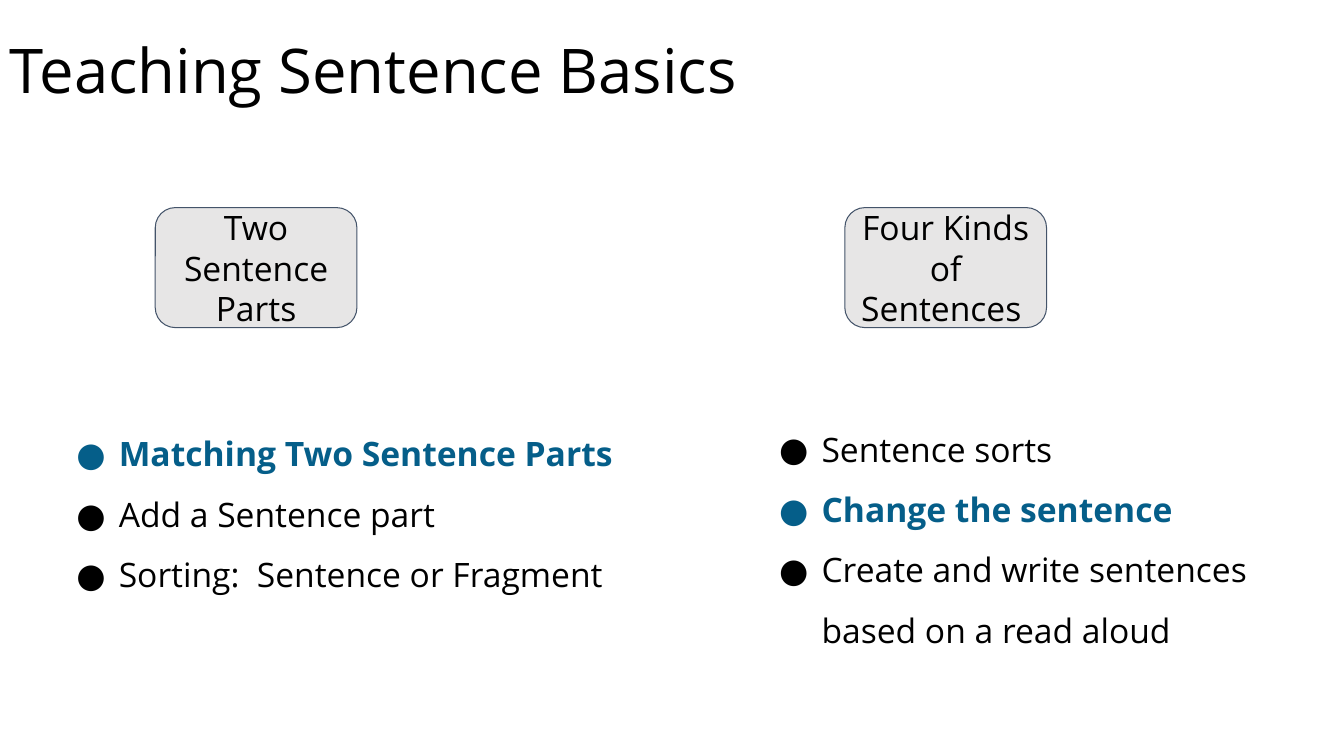
from lxml.etree import SubElement
from pptx import Presentation
from pptx.dml.color import RGBColor
from pptx.enum.shapes import MSO_SHAPE
from pptx.enum.text import MSO_ANCHOR, PP_ALIGN
from pptx.oxml.ns import qn
from pptx.util import Inches, Pt

FONT = "Open Sans"
BLACK, BLUE, GREY, SLATE = "000000", "055E89", "E7E6E6", "44546A"


def color(code):
    return RGBColor.from_string(code)


def style(item, **values):
    for name, value in values.items():
        setattr(item, name, value)


def write(para, text, size, code=BLACK, bold=False):
    run = para.add_run()
    run.text = text
    style(run.font, name=FONT, size=Pt(size), bold=bold)
    run.font.color.rgb = color(code)


def setup(frame, pad, anchor):
    style(frame, word_wrap=True, vertical_anchor=anchor,
          margin_left=Inches(0.1), margin_right=Inches(0.1),
          margin_top=Inches(pad), margin_bottom=Inches(pad))


def add_box(slide, place, pad, anchor=MSO_ANCHOR.TOP):
    box = slide.shapes.add_textbox(*map(Inches, place))
    setup(box.text_frame, pad, anchor)
    return box.text_frame


def add_title(slide, text):
    frame = add_box(slide, (0, 0.2, 10, 0.91), 0.05, MSO_ANCHOR.BOTTOM)
    para = frame.paragraphs[0]
    para.line_spacing = 0.9
    write(para, text, 44)


def add_label(slide, left, text):
    shape = slide.shapes.add_shape(
        MSO_SHAPE.ROUNDED_RECTANGLE,
        *map(Inches, (left, 2.06, 2, 1.19)))
    shape.shadow.inherit = False
    shape.fill.solid()
    shape.fill.fore_color.rgb = color(GREY)
    shape.line.color.rgb = color(SLATE)
    shape.line.width = Pt(0.75)
    setup(shape.text_frame, 0.1, MSO_ANCHOR.MIDDLE)
    para = shape.text_frame.paragraphs[0]
    para.alignment = PP_ALIGN.CENTER
    write(para, text, 24)


def add_bullet(para, code):
    props = para._p.get_or_add_pPr()
    props.set("marL", str(Inches(0.5)))
    props.set("indent", str(Inches(-0.42)))
    tint = SubElement(props, qn("a:buClr"))
    SubElement(tint, qn("a:srgbClr"), val=code)
    SubElement(props, qn("a:buFont"), typeface=FONT)
    SubElement(props, qn("a:buChar"), char="●")


def add_list(slide, place, pad, items, key):
    # The key item stands out in bold blue
    frame = add_box(slide, place, pad)
    for i, text in enumerate(items):
        para = frame.add_paragraph() if i else frame.paragraphs[0]
        code = BLUE if text == key else BLACK
        add_bullet(para, code)
        para.line_spacing = 1.5
        write(para, text, 24, code, text == key)


def main():
    deck = Presentation()
    style(deck, slide_width=Inches(13.33), slide_height=Inches(7.5))
    slide = deck.slides.add_slide(deck.slide_layouts[6])

    add_title(slide, "Teaching Sentence Basics")

    # Left column: sentence parts
    add_label(slide, 1.54, "Two Sentence Parts")
    add_list(slide, (0.58, 4.05, 5.95, 2.34), 0.05,
             ["Matching Two Sentence Parts", "Add a Sentence part",
              "Sorting:  Sentence or Fragment"],
             "Matching Two Sentence Parts")

    # Right column: kinds of sentences
    add_label(slide, 8.38, "Four Kinds of Sentences ")
    add_list(slide, (7.55, 3.95, 5.87, 2.42), 0.1,
             ["Sentence sorts", "Change the sentence",
              "Create and write sentences based on a read aloud"],
             "Change the sentence")

    deck.save("out.pptx")


if __name__ == "__main__":
    main()
